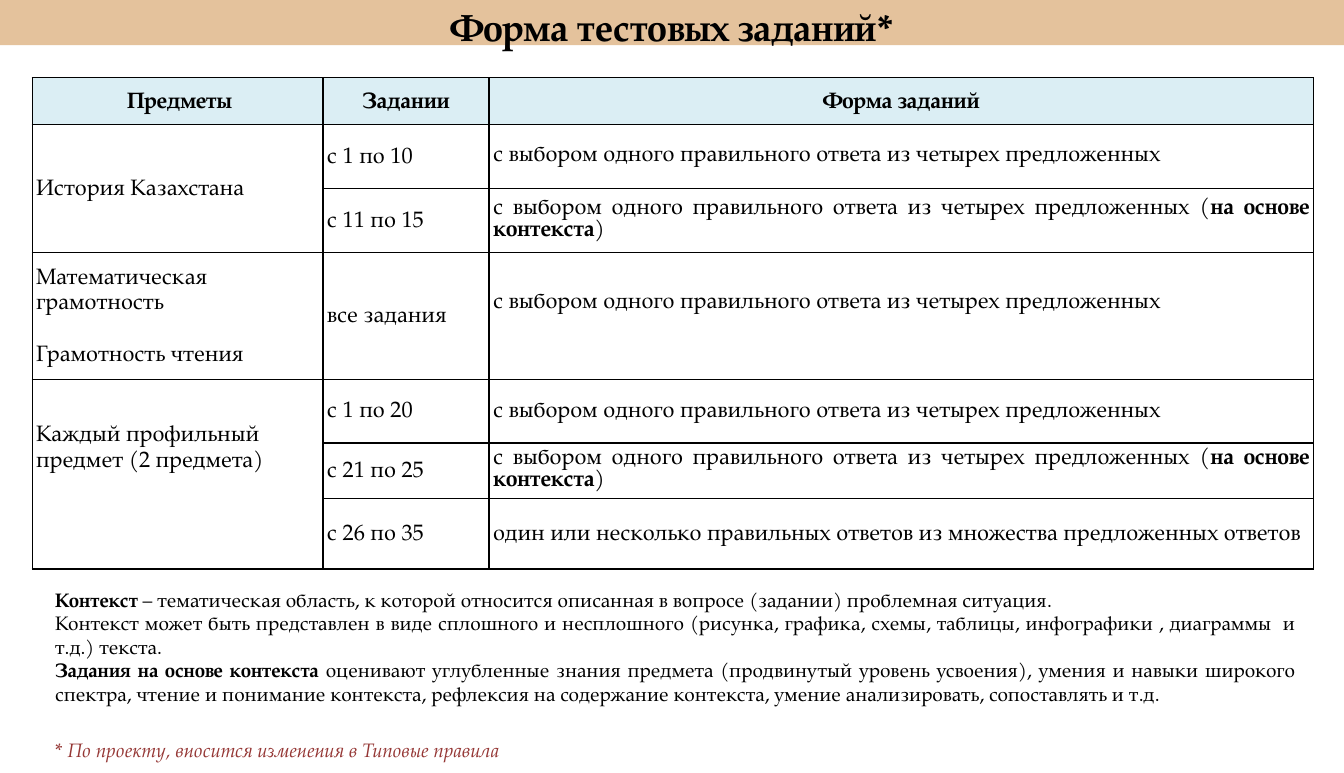
from lxml import etree
from pptx import Presentation
from pptx import util as u
from pptx.dml import color
from pptx.enum import shapes, text
from pptx.oxml import ns

CENTER, LEFT, JUSTIFY = text.PP_ALIGN.CENTER, text.PP_ALIGN.LEFT, text.PP_ALIGN.JUSTIFY
MIDDLE, TOP = text.MSO_ANCHOR.MIDDLE, text.MSO_ANCHOR.TOP


def rgb(value):
    return color.RGBColor.from_string(value)


class Sheet:
    font = "TeX Gyre Pagella"
    ink, sand, ice, white, brick = "000000", "E4C29C", "DBEEF4", "FFFFFF", "953735"

    def __init__(self, slide):
        self.slide = slide

    def add_spans(self, para, spans, size, align, ink=ink, italic=False):
        """Fill a paragraph with (words, bold) spans."""
        para.alignment = align
        for words, bold in spans:
            span = para.add_run()
            span.text = words
            span.font.name, span.font.size = self.font, u.Pt(size)
            span.font.bold, span.font.italic = bold, italic
            span.font.color.rgb = rgb(ink)

    def band(self, left, top, width, height):
        box = self.slide.shapes.add_shape(
            shapes.MSO_SHAPE.RECTANGLE, *map(u.Cm, (left, top, width, height)))
        box.shadow.inherit = False
        box.fill.solid()
        box.fill.fore_color.rgb = rgb(self.sand)
        box.line.fill.background()

    def textbox(self, left, top, width, height, paragraphs, size, align, anchor=TOP, **look):
        box = self.slide.shapes.add_textbox(*map(u.Cm, (left, top, width, height)))
        frame = box.text_frame
        frame.word_wrap = True
        frame.vertical_anchor = anchor
        for index, spans in enumerate(paragraphs):
            para = frame.add_paragraph() if index else frame.paragraphs[0]
            self.add_spans(para, spans, size, align, **look)

    def table(self, left, top, widths, heights):
        table = self.slide.shapes.add_table(
            len(heights), len(widths), u.Cm(left), u.Cm(top),
            u.Cm(sum(widths)), u.Cm(sum(heights))).table
        for column, width in zip(table.columns, widths):
            column.width = u.Cm(width)
        for row, height in zip(table.rows, heights):
            row.height = u.Cm(height)
        for cell in table.iter_cells():
            self.borders(cell)
        return table

    def borders(self, cell):
        props = cell._tc.get_or_add_tcPr()
        for side in ("a:lnL", "a:lnR", "a:lnT", "a:lnB"):
            line = etree.SubElement(props, ns.qn(side), w=str(u.Pt(1)))
            fill = etree.SubElement(line, ns.qn("a:solidFill"))
            etree.SubElement(fill, ns.qn("a:srgbClr"), val=self.ink)

    def cell(self, cell, paragraphs, align=LEFT, spacing=1.15, fill=white, left=0.1, bottom=0):
        cell.fill.solid()
        cell.fill.fore_color.rgb = rgb(fill)
        cell.vertical_anchor = MIDDLE
        cell.margin_left, cell.margin_right = u.Cm(left), u.Cm(0.1)
        cell.margin_top, cell.margin_bottom = 0, u.Cm(bottom)
        for index, spans in enumerate(paragraphs):
            para = cell.text_frame.add_paragraph() if index else cell.text_frame.paragraphs[0]
            para.line_spacing = spacing
            if index:
                para.space_before = u.Pt(18.6)
            self.add_spans(para, spans, 16, align)


def main():
    deck = Presentation()
    deck.slide_width, deck.slide_height = u.Cm(33.91), u.Cm(19.51)
    sheet = Sheet(deck.slides.add_slide(deck.slide_layouts[6]))

    # Title on its band
    sheet.band(-0.05, -0.05, 34.01, 1.19)
    sheet.textbox(0, 0, 33.91, 1.35, [[("Форма тестовых заданий*", True)]], 27, CENTER, MIDDLE)

    # Table grid and header
    table = sheet.table(0.81, 1.96, (7.34, 4.19, 20.8), (1.19, 1.6, 1.63, 3.2, 1.6, 1.4, 1.78))
    for column, name in enumerate(("Предметы", "Задании", "Форма заданий")):
        sheet.cell(table.cell(0, column), [[(name, True)]], CENTER, fill=sheet.ice,
                   left=0.1 if column else 0.2)

    # Subjects: first row, last row, paragraphs, bottom margin
    subjects = (
        (1, 2, ("История Казахстана",), 0),
        (3, 3, ("Математическая грамотность", "Грамотность чтения"), 0),
        (4, 6, ("Каждый профильный предмет (2 предмета)",), 1.32),
    )
    for first, last, names, bottom in subjects:
        if last > first:
            table.cell(first, 0).merge(table.cell(last, 0))
        sheet.cell(table.cell(first, 0), [[(name, False)] for name in names], bottom=bottom)

    # Task ranges and their forms
    choice = "с выбором одного правильного ответа из четырех предложенных"
    single = [(choice, False)]
    context = [(choice + " (", False), ("на основе контекста", True), (")", False)]
    several = [("один или несколько правильных ответов из множества предложенных ответов", False)]
    tasks = (
        ("с 1 по 10", single, JUSTIFY, 1, 0),
        ("с 11 по 15", context, JUSTIFY, 1, 0),
        ("все задания", single, JUSTIFY, 1, 0.66),
        ("с 1 по 20", single, LEFT, 1.15, 0),
        ("с 21 по 25", context, JUSTIFY, 1, 0),
        ("с 26 по 35", several, JUSTIFY, 1.15, 0),
    )
    for row, (label, form, align, spacing, bottom) in enumerate(tasks, start=1):
        sheet.cell(table.cell(row, 1), [[(label, False)]])
        sheet.cell(table.cell(row, 2), [form], align, spacing, bottom=bottom)

    # Explanation and footnote
    sheet.textbox(1.14, 14.71, 31.8, 3.38, [
        [("Контекст", True),
         (" – тематическая область, к которой относится описанная в вопросе (задании) "
          "проблемная ситуация.", False)],
        [("Контекст может быть представлен в виде сплошного и несплошного (рисунка, графика, "
          "схемы, таблицы, инфографики , диаграммы  и т.д.) текста.", False)],
        [("Задания на основе контекста", True),
         (" оценивают углубленные знания предмета (продвинутый уровень усвоения), умения и "
          "навыки широкого спектра, чтение и понимание контекста, рефлексия на содержание "
          "контекста, умение анализировать, сопоставлять и т.д.", False)],
    ], 14, JUSTIFY)
    sheet.textbox(1.14, 18.49, 31.8, 0.86,
                  [[("* По проекту, вносится изменения в Типовые правила", False)]],
                  14, JUSTIFY, ink=sheet.brick, italic=True)

    deck.save("out.pptx")


if __name__ == "__main__":
    main()
